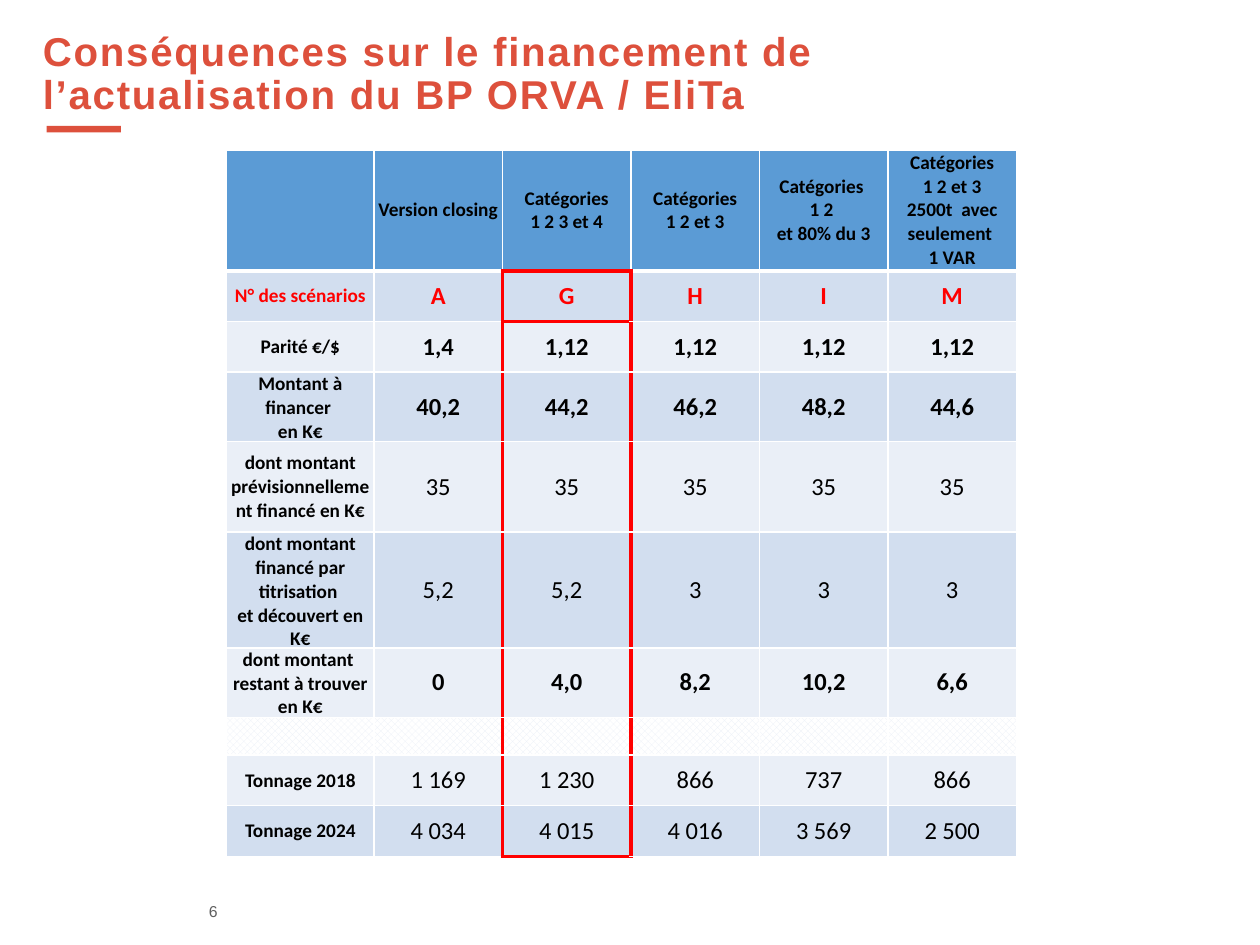
"""Build the slide comparing the financing scenarios of the business plan."""
from lxml import etree
from pptx import Presentation
from pptx.dml.color import RGBColor
from pptx.enum.dml import MSO_PATTERN
from pptx.enum.shapes import MSO_SHAPE
from pptx.enum.text import MSO_ANCHOR, PP_ALIGN
from pptx.oxml.ns import qn
from pptx.util import Cm, Pt

CENTER, LEFT = PP_ALIGN.CENTER, PP_ALIGN.LEFT
MIDDLE, TOP = MSO_ANCHOR.MIDDLE, MSO_ANCHOR.TOP
CHECKER = MSO_PATTERN.LARGE_CHECKER_BOARD
RECTANGLE = MSO_SHAPE.RECTANGLE
CORAL, RED, WHITE, BLACK = "DD503C", "FF0000", "FFFFFF", "000000"
HEADER_BLUE, DARK_BAND, LIGHT_BAND = "5B9BD5", "D2DEEF", "EAEFF7"


def color(value):
    """Turn a hex string into a colour."""
    return RGBColor.from_string(value)


def add_borders(cell, borders):
    """Draw the given sides, listed in the order L, R, T, B, ahead of the fill."""
    properties = cell._tc.get_or_add_tcPr()
    for position, (side, (value, points)) in enumerate(borders.items()):
        line = etree.Element(qn(f"a:ln{side}"), w=str(Pt(points)))
        solid = etree.SubElement(line, qn("a:solidFill"))
        etree.SubElement(solid, qn("a:srgbClr"), val=value)
        properties.insert(position, line)


prs = Presentation()
prs.slide_width, prs.slide_height = Cm(25.4), Cm(19.05)
slide = prs.slides.add_slide(prs.slide_layouts[5])

title = slide.shapes.title
title.left, title.top, title.width, title.height = Cm(0.61), Cm(0.51), Cm(20.35), Cm(1.83)
title.text_frame.text = "Conséquences sur le financement de l’actualisation du BP ORVA / EliTa"
title.text_frame.word_wrap = True
title.text_frame.vertical_anchor = TOP
heading = title.text_frame.paragraphs[0]
heading.alignment = LEFT
heading.line_spacing = 0.9
heading.font.name, heading.font.size, heading.font.bold = "Arial", Pt(23), True
heading.font.color.rgb = color(CORAL)
heading.runs[0].font._element.set("spc", "100")

accent = slide.shapes.add_shape(RECTANGLE, Cm(0.94), Cm(2.54), Cm(1.5), Cm(0.13))
accent.shadow.inherit = False
accent.fill.solid()
accent.fill.fore_color.rgb = color(CORAL)
accent.line.fill.background()

page_number = slide.shapes.add_textbox(Cm(3.96), Cm(18.14), Cm(0.94), Cm(0.46)).text_frame
page_number.word_wrap = True
page_number.vertical_anchor = MIDDLE
page_number.text = "6"
page_font = page_number.paragraphs[0].font
page_font.name, page_font.size = "Arial", Pt(9)
page_font.color.rgb = color("5F5F5F")

scenarios = [
    ["", "Version closing", "Catégories\n1 2 3 et 4", "Catégories\n1 2 et 3",
     "Catégories \n1 2 \net 80% du 3",
     "Catégories\n 1 2 et 3 \n2500t  avec seulement \n1 VAR"],
    ["N° des scénarios", "A", "G", "H", "I", "M"],
    ["Parité €/$", "1,4", "1,12", "1,12", "1,12", "1,12"],
    ["Montant à financer \nen K€", "40,2", "44,2", "46,2", "48,2", "44,6"],
    ["dont montant prévisionnellement financé en K€", "35", "35", "35", "35", "35"],
    ["dont montant financé par titrisation \net découvert en K€", "5,2", "5,2", "3", "3", "3"],
    ["dont montant \nrestant à trouver en K€", "0", "4,0", "8,2", "10,2", "6,6"],
    [""] * 6,
    ["Tonnage 2018", "1 169", "1 230", "866", "737", "866"],
    ["Tonnage 2024", "4 034", "4 015", "4 016", "3 569", "2 500"],
]
row_heights = [2.44, 1.02, 1.02, 1.37, 1.83, 1.83, 1.37, 0.61, 1.02, 1.02]
column_widths = [2.97] + [2.59] * 5
regular_rows = (4, 5, 8, 9)
scenario_row, separator_row, last_row = 1, 7, 9
before_choice, chosen, after_choice = 1, 2, 3
thick_red, thin_white = (RED, 2.25), (WHITE, 1)

table = slide.shapes.add_table(
    len(scenarios), len(column_widths), Cm(4.57), Cm(3.02),
    Cm(sum(column_widths)), Cm(sum(row_heights))).table
for column, width in zip(table.columns, column_widths):
    column.width = Cm(width)

for r, (texts, height) in enumerate(zip(scenarios, row_heights)):
    table.rows[r].height = Cm(height)
    for c, text in enumerate(texts):
        cell = table.cell(r, c)
        cell.margin_left = cell.margin_right = cell.margin_top = cell.margin_bottom = 0
        cell.vertical_anchor = MIDDLE
        if r == separator_row:
            cell.fill.patterned()
            cell.fill.pattern = CHECKER
            cell.fill.fore_color.rgb = color(LIGHT_BAND)
            cell.fill.back_color.rgb = color(WHITE)
        else:
            band = DARK_BAND if r % 2 else LIGHT_BAND
            cell.fill.solid()
            cell.fill.fore_color.rgb = color(HEADER_BLUE if r == 0 else band)

        if text:
            cell.text = text
            for paragraph in cell.text_frame.paragraphs:
                paragraph.alignment = CENTER
                paragraph.font.name = "Calibri"
                paragraph.font.size = Pt(11 if r == 0 or c == 0 else 14)
                paragraph.font.bold = c == 0 or r not in regular_rows
                paragraph.font.color.rgb = color(RED if r == scenario_row else BLACK)

        borders = {}
        if r == 0:
            borders = {"L": thin_white, "R": thin_white, "T": thin_white,
                       "B": thick_red if c == chosen else (WHITE, 3)}
        elif c == before_choice:
            borders = {"L": thin_white, "R": thick_red, "T": thin_white, "B": thin_white}
        elif c == chosen:
            borders = {"L": thick_red, "R": thick_red}
            if r == scenario_row:
                borders["T"] = thick_red
            if r == last_row:
                borders["B"] = thick_red
        elif c == after_choice:
            borders = {"L": thick_red, "R": thin_white, "T": thin_white, "B": thin_white}
        add_borders(cell, borders)

prs.save("out.pptx")
